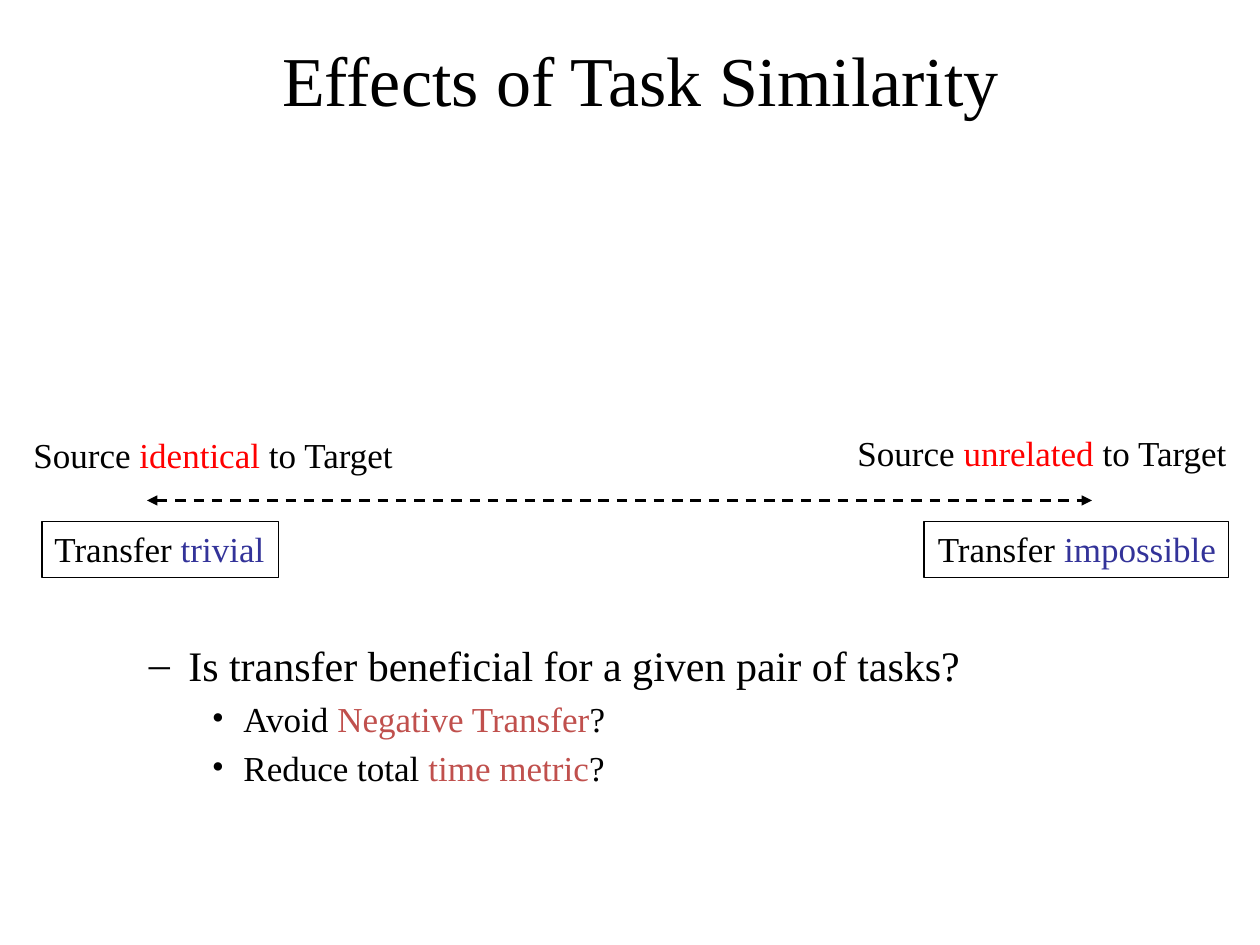
from lxml import etree
from pptx import Presentation
from pptx.dml.color import RGBColor
from pptx.enum import dml, shapes, text
from pptx.oxml import ns
from pptx.util import Pt

FONT = "Times New Roman"
HUES = {"ink": "000000", "red": "FF0000", "blue": "333399", "brick": "C0504D"}
LEFT, MID, RIGHT = text.PP_ALIGN.LEFT, text.PP_ALIGN.CENTER, text.PP_ALIGN.RIGHT


def hue(name):
    return RGBColor.from_string(HUES[name])


def sub(node, tag, **attrs):
    return etree.SubElement(node, ns.qn(tag), attrs)


def write(para, runs, size=20, align=LEFT, before=0, mark=None, left=0, hang=0):
    """Fill a paragraph with (words, colour) runs, with an optional bullet."""
    para.alignment, para.space_before = align, Pt(before)
    for words, tone in runs:
        run = para.add_run()
        run.text = words
        run.font.name, run.font.size = FONT, Pt(size)
        run.font.color.rgb = hue(tone)
    if mark:
        props = para._p.get_or_add_pPr()
        props.set("marL", str(Pt(left)))
        props.set("indent", str(Pt(-hang)))
        sub(props, "a:buFont", typeface=FONT)
        sub(props, "a:buChar", char=mark)


def add_box(slide, x, y, w, h, wrap=False, edge=False):
    """Add a text box, outlined on demand, and return its text frame."""
    box = (Pt(x), Pt(y), Pt(w), Pt(h))
    if edge:
        shape = slide.shapes.add_shape(shapes.MSO_SHAPE.RECTANGLE, *box)
        shape.shadow.inherit = False
        shape.fill.background()
        shape.line.color.rgb, shape.line.width = hue("ink"), Pt(0.75)
    else:
        shape = slide.shapes.add_textbox(*box)
    frame = shape.text_frame
    frame.word_wrap = wrap
    frame.vertical_anchor = text.MSO_ANCHOR.TOP
    return frame


def add_title(slide, x, y, w, h):
    frame = add_box(slide, x, y, w, h, wrap=True)
    frame.vertical_anchor = text.MSO_ANCHOR.MIDDLE
    write(frame.paragraphs[0], [("Effects of Task Similarity", "ink")],
          size=40, align=MID)


def add_arrow(slide, x, y, w):
    line = slide.shapes.add_connector(
        shapes.MSO_CONNECTOR.STRAIGHT, Pt(x), Pt(y), Pt(x + w), Pt(y))
    line.line.color.rgb, line.line.width = hue("ink"), Pt(1.5)
    line.line.dash_style = dml.MSO_LINE.DASH
    pen = line.line._get_or_add_ln()
    for end in ("a:headEnd", "a:tailEnd"):
        sub(pen, end, type="triangle")
    sub(line._element.spPr, "a:effectLst")


def add_scale(slide, x, y, w):
    """Similarity scale: captions above a two-way arrow, outcomes below."""
    add_arrow(slide, x + 72, y + 43, 540)
    # Words, box left, top, width, height, alignment, outlined
    parts = [
        (("Source ", "identical", " to Target"), 0, 1.4, 221, 31, LEFT, False),
        (("Source ", "unrelated", " to Target"), w - 227, 0, 227, 31, RIGHT, False),
        (("Transfer ", "trivial"), 12, 55, 135, 32, LEFT, True),
        (("Transfer ", "impossible"), w - 180, 55, 174, 32, RIGHT, True),
    ]
    for words, left, top, wide, high, align, edge in parts:
        frame = add_box(slide, x + left, y + top, wide, high, edge=edge)
        tones = ("ink", "blue" if edge else "red", "ink")
        write(frame.paragraphs[0], zip(words, tones), align=align)


def add_points(slide, x, y, w, h):
    frame = add_box(slide, x, y, w, h, wrap=True)
    write(frame.paragraphs[0],
          [("Is transfer beneficial for a given pair of tasks?", "ink")],
          size=24, mark="–", left=58.5, hang=22.5)
    for lead, key in (("Avoid ", "Negative Transfer"),
                      ("Reduce total ", "time metric")):
        write(frame.add_paragraph(),
              [(lead, "ink"), (key, "brick"), ("?", "ink")],
              before=4, mark="•", left=90, hang=18)


def main():
    deck = Presentation()
    deck.slide_width, deck.slide_height = Pt(720), Pt(540)
    slide = deck.slides.add_slide(deck.slide_layouts[6])
    add_points(slide, 42, 362, 636, 136)
    add_title(slide, 60, 0, 612, 90)
    add_scale(slide, 12, 243, 696)
    deck.save("out.pptx")


if __name__ == "__main__":
    main()
